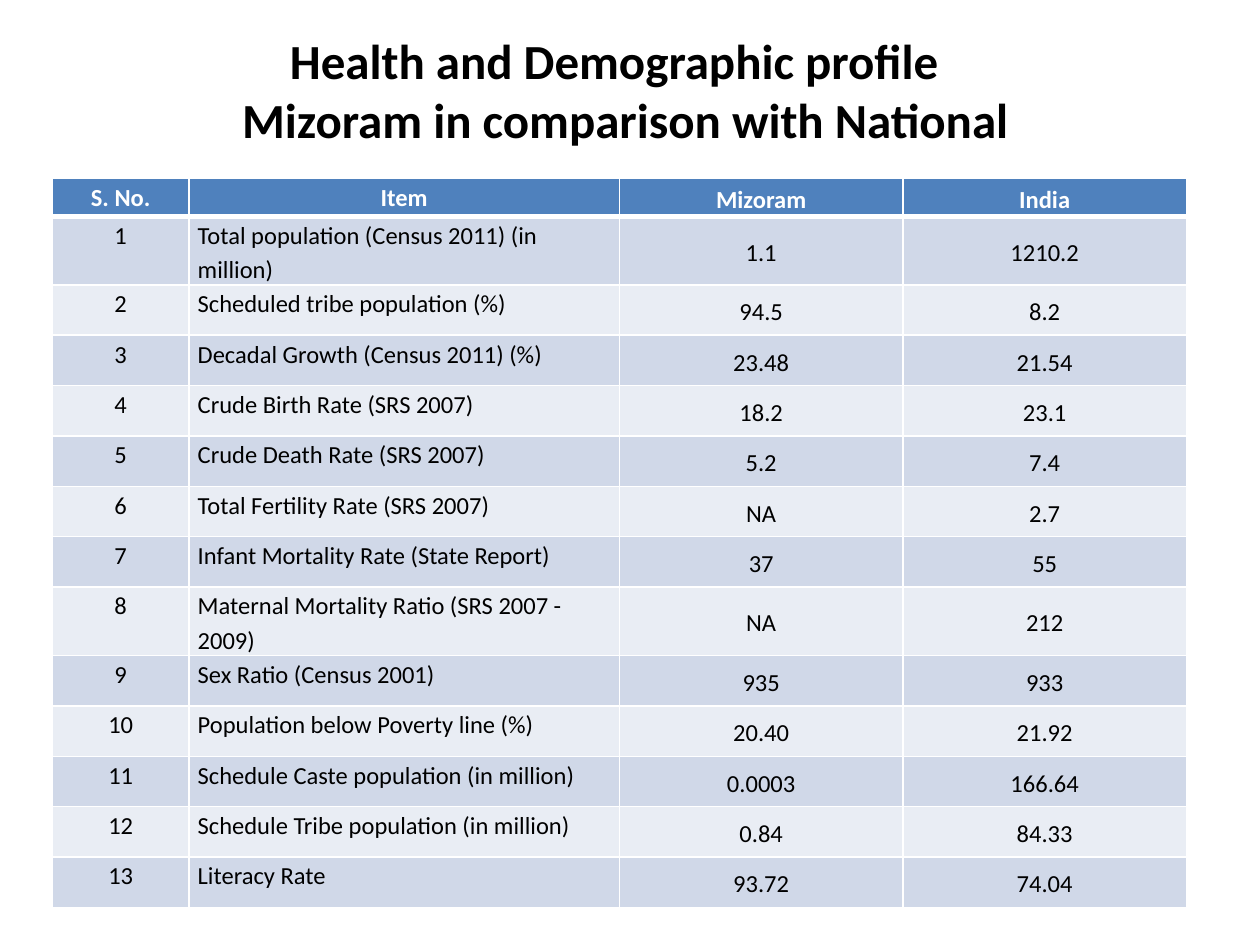
from lxml.etree import SubElement
from pptx import Presentation
from pptx.dml.color import RGBColor
from pptx.enum.text import MSO_ANCHOR, PP_ALIGN
from pptx.oxml.ns import qn
from pptx.util import Pt

WHITE = RGBColor(0xFF, 0xFF, 0xFF)
BLACK = RGBColor(0x00, 0x00, 0x00)
HEADER_BLUE = RGBColor(0x4F, 0x81, 0xBD)
BAND_DARK = RGBColor(0xD0, 0xD8, 0xE8)
BAND_LIGHT = RGBColor(0xE9, 0xED, 0xF4)

TITLE = "Health and Demographic profile \v Mizoram in comparison with National"
TITLE_BOX = (30, 12, 648, 78)
TABLE_BOX = (30, 102, 648, 396)
COLUMN_WIDTHS = (78, 246, 162, 162)
HEADER_HEIGHT = 21.6
HEADINGS = ("S. No.", "Item", "Mizoram", "India")
INDICATORS = (
    ("Total population (Census 2011) (in million)", "1.1", "1210.2"),
    ("Scheduled tribe population (%)", "94.5", "8.2"),
    ("Decadal Growth (Census 2011) (%)", "23.48", "21.54"),
    ("Crude Birth Rate (SRS 2007)", "18.2", "23.1"),
    ("Crude Death Rate (SRS 2007)", "5.2", "7.4"),
    ("Total Fertility Rate (SRS 2007)", "NA", "2.7"),
    ("Infant Mortality Rate (State Report)", "37", "55"),
    ("Maternal Mortality Ratio (SRS 2007 - 2009)", "NA", "212"),
    ("Sex Ratio (Census 2001)", "935", "933"),
    ("Population below Poverty line (%)", "20.40", "21.92"),
    ("Schedule Caste population (in million)", "0.0003", "166.64"),
    ("Schedule Tribe population (in million)", "0.84", "84.33"),
    ("Literacy Rate", "93.72", "74.04"),
)


def write_text(frame, text, size=14, color=BLACK, bold=False,
               align=PP_ALIGN.CENTER, line_spacing=None, space_after=None):
    """Fill a text frame with one formatted paragraph."""
    frame.text = text
    para = frame.paragraphs[0]
    para.alignment = align
    if line_spacing is not None:
        para.line_spacing = line_spacing
    if space_after is not None:
        para.space_after = Pt(space_after)
    for span in para.runs:
        span.font.name = "Calibri"
        span.font.size = Pt(size)
        span.font.bold = bold
        span.font.color.rgb = color


def set_borders(cell, bottom=1):
    """Draw white borders around a cell, with a chosen bottom width."""
    properties = cell._tc.get_or_add_tcPr()
    for side, width in (("L", 1), ("R", 1), ("T", 1), ("B", bottom)):
        line = SubElement(properties, qn(f"a:ln{side}"), w=str(Pt(width)))
        fill = SubElement(line, qn("a:solidFill"))
        SubElement(fill, qn("a:srgbClr"), val=str(WHITE))


def format_cell(cell, text, row, column):
    """Style one table cell according to its row and column."""
    header = row == 0
    set_borders(cell, bottom=3 if header else 1)
    cell.fill.solid()
    cell.fill.fore_color.rgb = (
        HEADER_BLUE if header else BAND_DARK if row % 2 else BAND_LIGHT)
    cell.margin_left = cell.margin_right = Pt(5)
    cell.margin_top = cell.margin_bottom = Pt(0)
    cell.vertical_anchor = MSO_ANCHOR.MIDDLE if column >= 2 else MSO_ANCHOR.TOP
    left_aligned = column == 1 and not header
    write_text(cell.text_frame, text, bold=header,
               color=WHITE if header else BLACK,
               align=PP_ALIGN.LEFT if left_aligned else PP_ALIGN.CENTER,
               line_spacing=1.15, space_after=10)


def place_title(page, box):
    """Put the heading into the title placeholder."""
    title = page.shapes.title
    title.left, title.top, title.width, title.height = map(Pt, box)
    title.text_frame.vertical_anchor = MSO_ANCHOR.MIDDLE
    write_text(title.text_frame, TITLE, size=28, bold=True)


def place_table(page, box):
    """Build the comparison table inside the given box."""
    rows = [HEADINGS] + [
        (str(number), *values) for number, values in enumerate(INDICATORS, 1)]
    table = page.shapes.add_table(
        len(rows), len(HEADINGS), *map(Pt, box)).table
    for column, width in zip(table.columns, COLUMN_WIDTHS):
        column.width = Pt(width)
    row_height = (box[3] - HEADER_HEIGHT) / len(INDICATORS)
    for index, values in enumerate(rows):
        table.rows[index].height = Pt(row_height if index else HEADER_HEIGHT)
        for column, text in enumerate(values):
            format_cell(table.cell(index, column), text, index, column)


def main():
    """Create the deck and save it."""
    deck = Presentation()
    deck.slide_width, deck.slide_height = Pt(720), Pt(540)
    page = deck.slides.add_slide(deck.slide_layouts[5])
    place_title(page, TITLE_BOX)
    place_table(page, TABLE_BOX)
    deck.save("out.pptx")


if __name__ == "__main__":
    main()
